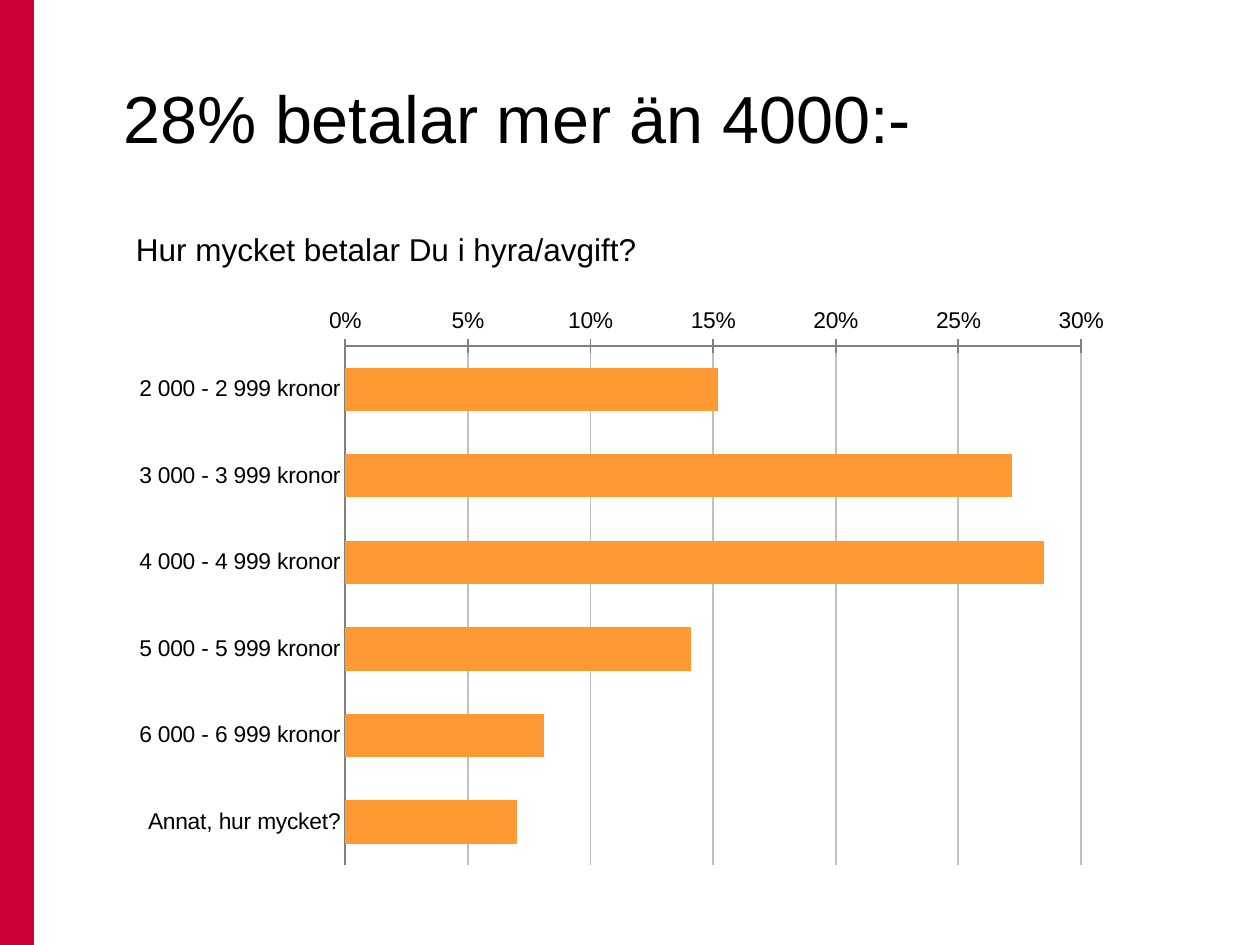
from lxml import etree
from pptx import Presentation
from pptx.chart import data as chart_data
from pptx.dml import color
from pptx.enum import chart as ch, shapes, text
from pptx.oxml import ns
from pptx.util import Inches, Pt


def rgb(value):
    return color.RGBColor.from_string(value)


class SlideBuilder:
    FONT = "Arial"
    INK = "000000"
    RED = "CC0033"
    ORANGE = "FF9933"
    GRID = "C0C0C0"
    AXIS = "808080"

    def __init__(self, prs):
        self.s = prs.slides.add_slide(prs.slide_layouts[5])

    def style(self, font, size):
        font.name = self.FONT
        font.size = Pt(size)
        font.bold = False
        font.color.rgb = rgb(self.INK)

    def line(self, fmt, hex_color, width):
        fmt.line.color.rgb = rgb(hex_color)
        fmt.line.width = Pt(width)

    def set_text(self, sp, wording, size, anchor):
        tf = sp.text_frame
        tf.text = wording
        tf.word_wrap = True
        tf.vertical_anchor = anchor
        p = tf.paragraphs[0]
        p.alignment = text.PP_ALIGN.LEFT
        self.style(p.runs[0].font, size)
        return tf

    def band(self, x, y, w, h):
        sp = self.s.shapes.add_shape(
            shapes.MSO_SHAPE.RECTANGLE, Inches(x), Inches(y), Inches(w), Inches(h))
        sp.shadow.inherit = False
        sp.fill.solid()
        sp.fill.fore_color.rgb = rgb(self.RED)
        sp.line.fill.background()

    def title(self, wording, x, y, w, h):
        sp = self.s.shapes.title
        sp.left, sp.top, sp.width, sp.height = map(Inches, (x, y, w, h))
        tf = self.set_text(sp, wording, 38, text.MSO_ANCHOR.MIDDLE)
        tf.auto_size = text.MSO_AUTO_SIZE.NONE

    def label(self, wording, x, y, w, h):
        sp = self.s.shapes.add_textbox(Inches(x), Inches(y), Inches(w), Inches(h))
        tf = self.set_text(sp, wording, 18, text.MSO_ANCHOR.TOP)
        tf.auto_size = text.MSO_AUTO_SIZE.SHAPE_TO_FIT_TEXT

    def place_plot(self, chart, **fractions):
        area = chart.plots[0]._element.getparent()
        for old in area.findall(ns.qn("c:layout")):
            area.remove(old)
        layout = etree.Element(ns.qn("c:layout"))
        manual = etree.SubElement(layout, ns.qn("c:manualLayout"))
        settings = {"layoutTarget": "inner", "xMode": "edge", "yMode": "edge", **fractions}
        for tag, value in settings.items():
            etree.SubElement(manual, ns.qn(f"c:{tag}")).set("val", str(value))
        area.insert(0, layout)

    def bar_chart(self, shares, x, y, w, h):
        data = chart_data.CategoryChartData(number_format="0.0%")
        data.categories = list(shares)
        data.add_series("Series 1", list(shares.values()))
        chart = self.s.shapes.add_chart(
            ch.XL_CHART_TYPE.BAR_CLUSTERED,
            Inches(x), Inches(y), Inches(w), Inches(h), data).chart
        chart.has_title = False
        chart.has_legend = False
        self.style(chart.font, 18)

        plot = chart.plots[0]
        plot.gap_width = 100
        plot.vary_by_categories = False
        fill = plot.series[0].format.fill
        fill.solid()
        fill.fore_color.rgb = rgb(self.ORANGE)

        for axis in (chart.category_axis, chart.value_axis):
            self.style(axis.tick_labels.font, 13)
            self.line(axis.format, self.AXIS, 1)
            axis.minor_tick_mark = ch.XL_TICK_MARK.NONE
        categories, values = chart.category_axis, chart.value_axis
        categories.reverse_order = True
        categories.major_tick_mark = ch.XL_TICK_MARK.NONE
        values.major_tick_mark = ch.XL_TICK_MARK.CROSS
        values.minimum_scale = 0
        values.maximum_scale = 0.3
        values.major_unit = 0.05
        values.tick_labels.number_format = "0%"
        values.tick_labels.number_format_is_linked = False
        values.has_major_gridlines = True
        self.line(values.major_gridlines.format, self.GRID, 1)
        self.place_plot(chart, x=0.22, y=0.08, w=0.73, h=0.9)


def main():
    prs = Presentation()
    prs.slide_width = Inches(10)
    prs.slide_height = Inches(7.5)
    slide = SlideBuilder(prs)
    slide.band(0, 0, 0.27, 7.5)
    slide.title("28% betalar mer än 4000:-", 0.88, 0.3, 8.39, 1.25)
    slide.label("Hur mycket betalar Du i hyra/avgift?", 0.98, 1.78, 7.48, 0.4)
    rent_shares = {
        "2 000 - 2 999 kronor": 0.152,
        "3 000 - 3 999 kronor": 0.272,
        "4 000 - 4 999 kronor": 0.285,
        "5 000 - 5 999 kronor": 0.141,
        "6 000 - 6 999 kronor": 0.081,
        "Annat, hur mycket?": 0.07,
    }
    slide.bar_chart(rent_shares, 0.98, 2.38, 8, 4.58)
    prs.save("out.pptx")


if __name__ == "__main__":
    main()
